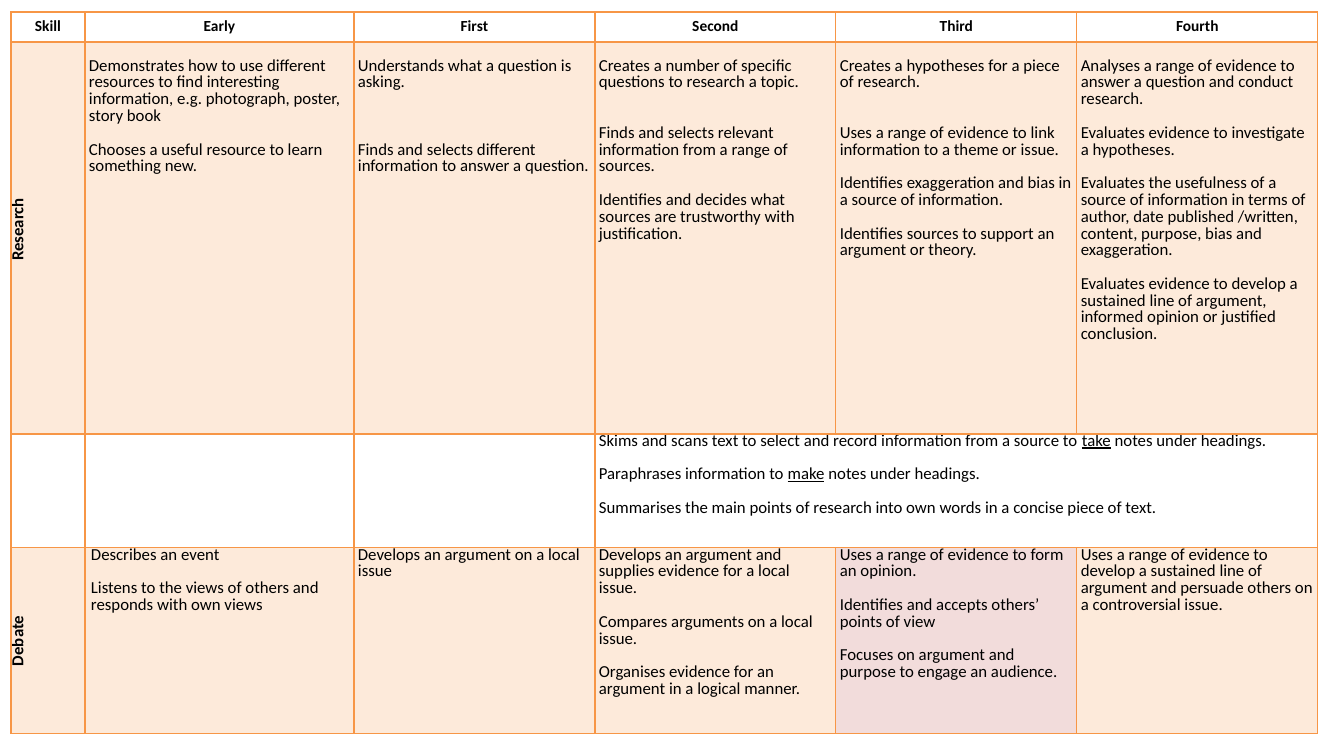
import pptx
import pptx.dml.color
import pptx.enum.text
import pptx.oxml
import pptx.util

# Content: one list of paragraphs per cell; (n, text) leaves n lines above; _word_ is underlined
HEADERS = ["Skill", "Early", "First", "Second", "Third", "Fourth"]
RESEARCH = [
    ["Research"],
    ["Demonstrates how to use different resources to find interesting information, "
     "e.g. photograph, poster, story book",
     "Chooses a useful resource to learn something new."],
    ["Understands what a question is asking.",
     (3, "Finds and selects different information to answer a question.")],
    ["Creates a number of specific questions to research a topic.",
     (2, "Finds and selects relevant information from a range of sources."),
     "Identifies and decides what sources are trustworthy with justification."],
    ["Creates a hypotheses for a piece of research.",
     (2, "Uses a range of evidence to link information to a theme or issue."),
     "Identifies exaggeration and bias in a source of information.",
     "Identifies sources to support an argument or theory."],
    ["Analyses a range of evidence to answer a question and conduct research.",
     "Evaluates evidence to investigate a hypotheses.",
     "Evaluates the usefulness of a source of information in terms of author, "
     "date published /written, content, purpose, bias and exaggeration.",
     "Evaluates evidence to develop a sustained line of argument, "
     "informed opinion or justified conclusion."],
]
NOTE_TAKING = [
    [], [], [],
    ["Skims and scans text to select and record information from a source to _take_ notes under headings.",
     "Paraphrases information to _make_ notes under headings.",
     "Summarises the main points of research into own words in a concise piece of text."],
    [], [],
]
DEBATE = [
    ["Debate"],
    ["Describes an event",
     "Listens to the views of others and responds with own views"],
    ["Develops an argument on a local issue"],
    ["Develops an argument and supplies evidence for a local issue.",
     "Compares arguments on a local issue.",
     "Organises evidence for an argument in a logical manner."],
    ["Uses a range of evidence to form an opinion.",
     "Identifies and accepts others’ points of view",
     "Focuses on argument and purpose to engage an audience."],
    ["Uses a range of evidence to develop a sustained line of argument "
     "and persuade others on a controversial issue."],
]
ROWS = [[[h] for h in HEADERS], RESEARCH, NOTE_TAKING, DEBATE]

# Layout in px
LEFT, TOP = 11, 12
COL_WIDTHS = [74, 269] + [241] * 4
ROW_HEIGHTS = [30, 392, 114, 186]
SIDE_MARGIN = 4
LINE_PX = 17
LINE_PT = 12
ORANGE, RED = "F79646", "C0504D"
TINT = 20


def px(n):
    return round(n * 914400 / 100.8)


def color(value):
    return pptx.dml.color.RGBColor.from_string(value)


def set_borders(cell, header):
    tcPr = cell._tc.get_or_add_tcPr()
    for side in "LRTB":
        points = 2 if header and side == "B" else 1
        tcPr.append(pptx.oxml.parse_xml(
            f'<a:ln{side} xmlns:a="http://schemas.openxmlformats.org/drawingml/2006/main" '
            f'w="{points * 12700}"><a:solidFill><a:srgbClr val="{ORANGE}"/></a:solidFill>'
            f'</a:ln{side}>'))


def set_fill(cell, tint):
    if tint is None:
        cell.fill.background()
        return
    cell.fill.solid()
    cell.fill.fore_color.rgb = color(tint)
    srgb = cell._tc.tcPr.find(".//{*}solidFill[last()]/{*}srgbClr")
    srgb = cell._tc.tcPr.findall("{*}solidFill/{*}srgbClr")[0]
    alpha = srgb.makeelement(srgb.tag.replace("srgbClr", "alpha"), {"val": str(TINT * 1000)})
    srgb.append(alpha)


def write(cell, items, size, bold):
    tf = cell.text_frame
    for i, item in enumerate(items):
        gap, text = item if isinstance(item, tuple) else (1, item)
        p = tf.paragraphs[0] if i == 0 else tf.add_paragraph()
        p.line_spacing = pptx.util.Pt(LINE_PT)
        if i:
            p.space_before = pptx.util.Pt(gap * LINE_PT)
        if bold:
            p.alignment = pptx.enum.text.PP_ALIGN.CENTER
        for k, part in enumerate(text.split("_")):
            r = p.add_run()
            r.text = part
            r.font.name = "Calibri"
            r.font.size = pptx.util.Pt(size)
            r.font.bold = bold
            r.font.color.rgb = color("000000")
            if k % 2:
                r.font.underline = True


prs = pptx.Presentation()
prs.slide_width, prs.slide_height = px(1344), px(756)
s = prs.slides.add_slide(prs.slide_layouts[6])

# Table grid
table = s.shapes.add_table(len(ROWS), len(HEADERS), px(LEFT), px(TOP),
                           px(sum(COL_WIDTHS)), px(sum(ROW_HEIGHTS))).table
table.first_row = table.horz_banding = False
for col, width in zip(table.columns, COL_WIDTHS):
    col.width = px(width)
for row, height in zip(table.rows, ROW_HEIGHTS):
    row.height = px(height)
table.cell(2, 3).merge(table.cell(2, 5))

# Cells
for y, row in enumerate(ROWS):
    for x, items in enumerate(row):
        cell = table.cell(y, x)
        header, skill = y == 0, x == 0
        cell.margin_left = cell.margin_right = px(SIDE_MARGIN)
        cell.margin_top = cell.margin_bottom = 0
        if row is RESEARCH:
            if skill:
                cell.margin_left = px(SIDE_MARGIN + LINE_PX)
            else:
                cell.margin_top = px(LINE_PX)
        if row is DEBATE and x == 1:
            cell.margin_left = px(SIDE_MARGIN + 2)
        if header or skill:
            cell.vertical_anchor = pptx.enum.text.MSO_ANCHOR.MIDDLE
        if skill and not header and items:
            cell._tc.get_or_add_tcPr().set("vert", "vert270")
        set_borders(cell, header)
        if header or row is NOTE_TAKING:
            set_fill(cell, None)
        else:
            set_fill(cell, RED if row is DEBATE and x == 4 else ORANGE)
        write(cell, items, 11 if header else 12, header or skill)

prs.save("out.pptx")
